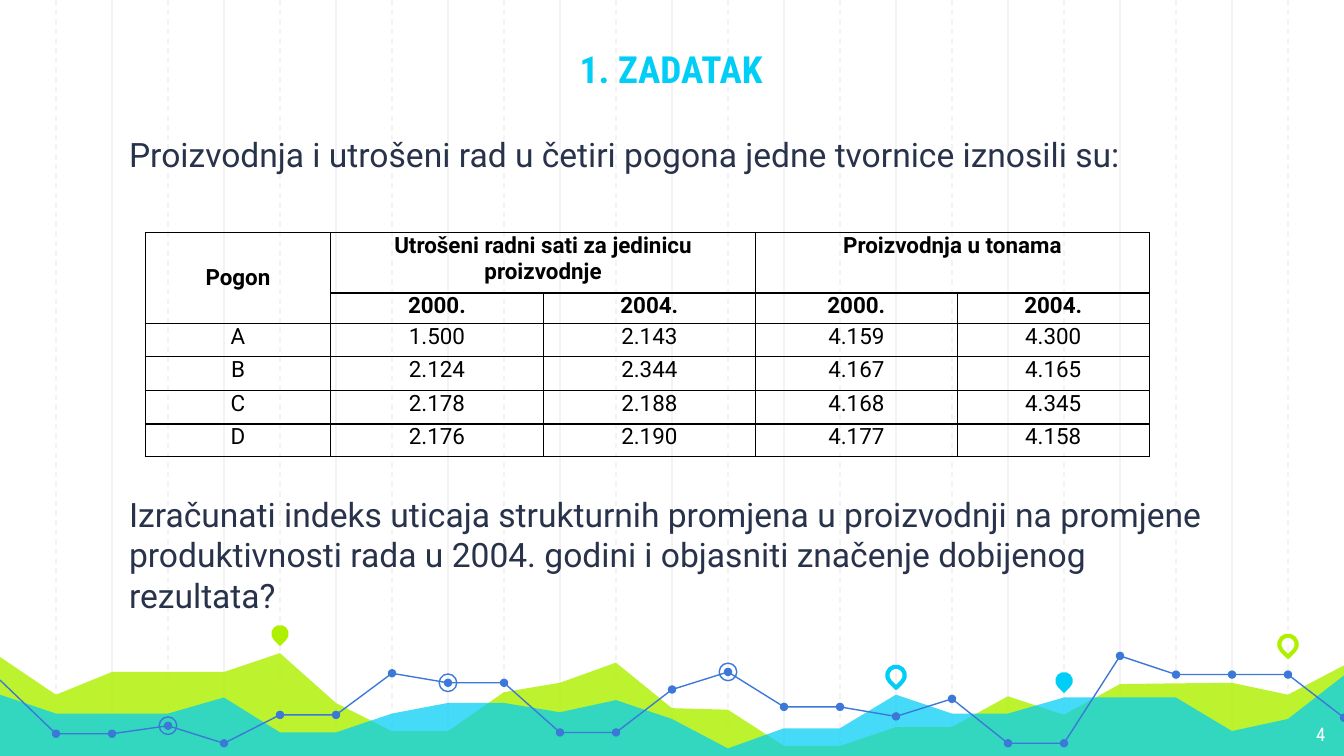
from lxml.etree import SubElement
from pptx import Presentation
from pptx.dml.color import RGBColor
from pptx.enum.dml import MSO_LINE_DASH_STYLE as Dash
from pptx.enum.shapes import MSO_CONNECTOR as Connector, MSO_SHAPE as Shape
from pptx.enum.text import MSO_ANCHOR as Anchor, MSO_AUTO_SIZE as AutoSize, PP_ALIGN as Align
from pptx.oxml.ns import qn
from pptx.util import Pt

# Content
TITLE = "1. ZADATAK"
INTRO = "Proizvodnja i utrošeni rad u četiri pogona jedne tvornice iznosili su:"
QUESTION = ("Izračunati indeks uticaja strukturnih promjena u proizvodnji na promjene "
            "produktivnosti rada u 2004. godini i objasniti značenje dobijenog rezultata?")
PAGE_NUMBER = "4"
TABLE_ROWS = [
    ["Pogon", "Utrošeni radni sati za jedinicu proizvodnje", "", "Proizvodnja u tonama", ""],
    ["", "2000.", "2004.", "2000.", "2004."],
    ["A", "1.500", "2.143", "4.159", "4.300"],
    ["B", "2.124", "2.344", "4.167", "4.165"],
    ["C", "2.178", "2.188", "4.168", "4.345"],
    ["D", "2.176", "2.190", "4.177", "4.158"],
]
MERGES = [(0, 0, 1, 0), (0, 1, 0, 2), (0, 3, 0, 4)]
COLUMN_WIDTHS = [99.4, 113.8, 113.8, 108, 103]
ROW_HEIGHTS = [32.4, 16.2, 18, 18, 18, 17.6]

COLORS = {"grid": "F3F3F3", "green": "AFF000", "cyan": "00CEF6", "blue": "3C78D8",
          "text": "28324A", "black": "000000", "white": "FFFFFF"}
FONT, TITLE_FONT = "Roboto", "Roboto Condensed"

# Decoration: one height per grid column, in points
STEP, LAST, BOTTOM = 30, 24, 406.5
AREAS = [
    ("green", 82, [350.6, 372.2, 360, 360, 360, 349.9, 376.6, 391.7, 391.7, 370.8, 365.8, 355,
                   379.4, 380.2, 399.6, 399.6, 389.5, 389.5, 373, 383, 366.5, 366.1, 365.8,
                   372.2, 355.7]),
    ("cyan", 73, [371.5, 382.3, 382.3, 382.3, 373.7, 392.4, 392.4, 382.3, 376.6, 376.6, 381.6,
                  375.1, 385.2, 401, 390.2, 390.2, 372.2, 382.3, 382.3, 373.7, 373.7, 373.7,
                  391.7, 385.2, 360.7]),
]
TREND = [364.3, 393.1, 393.1, 388.8, 398.2, 383, 383, 360.7, 365.8, 365.8, 392.4, 392.4, 369.4,
         360, 378.7, 378.7, 383.8, 374.4, 398.2, 398.2, 351.4, 361.4, 361.4, 361.4, 384.5]
TREND_PARTS = [(0, 11), (11, 20), (20, 24)]
RINGS = [3, 8, 13]
PINS = [(5, 339.5, "green", True), (16, 361.8, "cyan", False),
        (19, 364.7, "cyan", True), (23, 345.2, "green", False)]
DOT_SIZE, MARK_SIZE = 4.5, 9.4

presentation = Presentation()
presentation.slide_width, presentation.slide_height = Pt(720), Pt(405)
slide = presentation.slides.add_slide(presentation.slide_layouts[1])
shapes = slide.shapes


def rgb(name):
    return RGBColor.from_string(COLORS[name])


def write(paragraph, text, font=FONT, size=12, color="black", bold=False,
          align=Align.LEFT, before=0, after=0):
    paragraph.alignment = align
    paragraph.space_before, paragraph.space_after = Pt(before), Pt(after)
    run = paragraph.add_run()
    run.text = text
    run.font.name, run.font.size, run.font.bold = font, Pt(size), bold
    run.font.color.rgb = rgb(color)


def paint(shape, fill=None, line=None, width=0.75):
    shape.shadow.inherit = False
    if fill:
        shape.fill.solid()
        shape.fill.fore_color.rgb = rgb(fill)
    else:
        shape.fill.background()
    if line:
        shape.line.color.rgb = rgb(line)
        shape.line.width = Pt(width)
    else:
        shape.line.fill.background()


def add_mark(kind, column, y, size, **style):
    shape = shapes.add_shape(kind, Pt(column * STEP - size / 2), Pt(y - size / 2),
                             Pt(size), Pt(size))
    paint(shape, **style)
    return shape


def add_outline(points, close):
    points = [(Pt(x), Pt(y)) for x, y in points]
    builder = shapes.build_freeform(*points[0], scale=1.0)
    builder.add_line_segments(points[1:], close=close)
    return builder.convert_to_shape()


def place(shape, left, top, width, height, anchor=Anchor.TOP):
    shape.left, shape.top, shape.width, shape.height = map(Pt, (left, top, width, height))
    frame = shape.text_frame
    frame.word_wrap, frame.auto_size, frame.vertical_anchor = True, AutoSize.NONE, anchor
    frame.margin_left = frame.margin_right = frame.margin_top = frame.margin_bottom = Pt(7.2)
    return frame


# Background grid: solid on even columns, dashed on odd ones
for column in [*range(2, LAST, 2), *range(1, LAST, 2)]:
    x = Pt(column * STEP)
    grid_line = shapes.add_connector(Connector.STRAIGHT, x, 0, x, Pt(BOTTOM))
    grid_line.line.color.rgb = rgb("grid")
    grid_line.line.width = Pt(0.75)
    if column % 2:
        grid_line.line.dash_style = Dash.DASH
    SubElement(grid_line.element.spPr, qn("a:effectLst"))

# Translucent areas
for color, opacity, heights in AREAS:
    top_edge = [(column * STEP, y) for column, y in enumerate(heights)]
    area = add_outline([(-2, heights[0]), *top_edge[1:-1], (721.5, heights[-1]),
                        (721.5, BOTTOM), (-2, BOTTOM)], close=True)
    paint(area, fill=color)
    fill_color = area.element.spPr.find(qn("a:solidFill")).find(qn("a:srgbClr"))
    SubElement(fill_color, qn("a:alpha"), val=str(opacity * 1000))

# Trend line with dots, rings and pins
for first, last in TREND_PARTS:
    trend = add_outline([(column * STEP, TREND[column]) for column in range(first, last + 1)],
                        close=False)
    paint(trend, line="blue")
for column in range(1, LAST + 1):
    add_mark(Shape.OVAL, column, TREND[column], DOT_SIZE, fill="blue")
for column in RINGS:
    add_mark(Shape.OVAL, column, TREND[column], MARK_SIZE, line="blue")
for column, y, color, filled in PINS:
    style = {"fill": color} if filled else {"line": color, "width": 2.25}
    add_mark(Shape.TEAR, column, y, MARK_SIZE, **style).rotation = 135

# Page number
number_frame = place(shapes.add_textbox(0, 0, 0, 0), 673.9, 380.2, 43.2, 25.2)
write(number_frame.paragraphs[0], PAGE_NUMBER, font=TITLE_FONT, size=10, color="white",
      align=Align.RIGHT)

# Body and title, in front of the decoration
title, body = shapes.title, slide.placeholders[1]
for placeholder in (body, title):
    shapes.element.append(placeholder.element)
body_frame = place(body, 53.3, 64.8, 612, 275.8)
for text, before in [(INTRO, 6), (QUESTION, 171)]:
    paragraph = body_frame.paragraphs[0] if text == INTRO else body_frame.add_paragraph()
    write(paragraph, text, size=18, color="text", before=before)
    properties = paragraph._p.get_or_add_pPr()
    properties.set("marL", str(Pt(8.64)))
    properties.set("indent", "0")
    SubElement(properties, qn("a:buNone"))
title_frame = place(title, 84.2, 0, 550.8, 56.2, Anchor.BOTTOM)
write(title_frame.paragraphs[0], TITLE, font=TITLE_FONT, size=20, color="cyan", bold=True,
      align=Align.CENTER)

# Table
table = shapes.add_table(len(ROW_HEIGHTS), len(COLUMN_WIDTHS), Pt(77.8), Pt(124.6),
                         Pt(sum(COLUMN_WIDTHS)), Pt(sum(ROW_HEIGHTS))).table
table.first_row = table.horz_banding = False
for column, width in zip(table.columns, COLUMN_WIDTHS):
    column.width = Pt(width)
for row, height in zip(table.rows, ROW_HEIGHTS):
    row.height = Pt(height)
for top, left, bottom, right in MERGES:
    table.cell(top, left).merge(table.cell(bottom, right))
for row_index, texts in enumerate(TABLE_ROWS):
    for column_index, text in enumerate(texts):
        cell = table.cell(row_index, column_index)
        cell.margin_left = cell.margin_right = Pt(5)
        cell.margin_top = cell.margin_bottom = 0
        for side in ("lnL", "lnR", "lnT", "lnB"):
            border = SubElement(cell._tc.get_or_add_tcPr(), qn("a:" + side), w=str(Pt(0.75)))
            SubElement(SubElement(border, qn("a:solidFill")), qn("a:srgbClr"),
                       val=COLORS["black"])
        cell.fill.background()
        if text:
            write(cell.text_frame.paragraphs[0], text, bold=row_index < 2, align=Align.CENTER)
corner = table.cell(0, 0)
corner.vertical_anchor = Anchor.MIDDLE
corner.text_frame.paragraphs[0].space_before = Pt(12)
corner.text_frame.paragraphs[0].space_after = Pt(3)

presentation.save("out.pptx")
